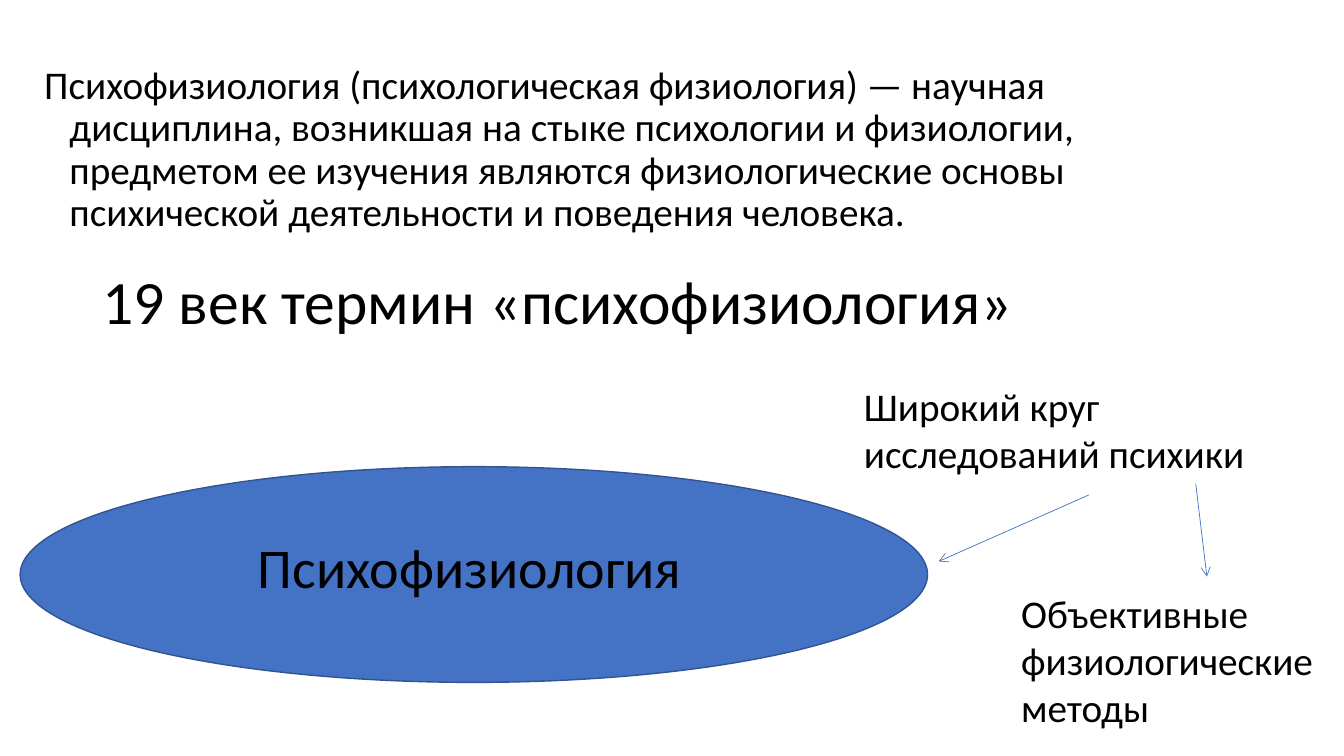
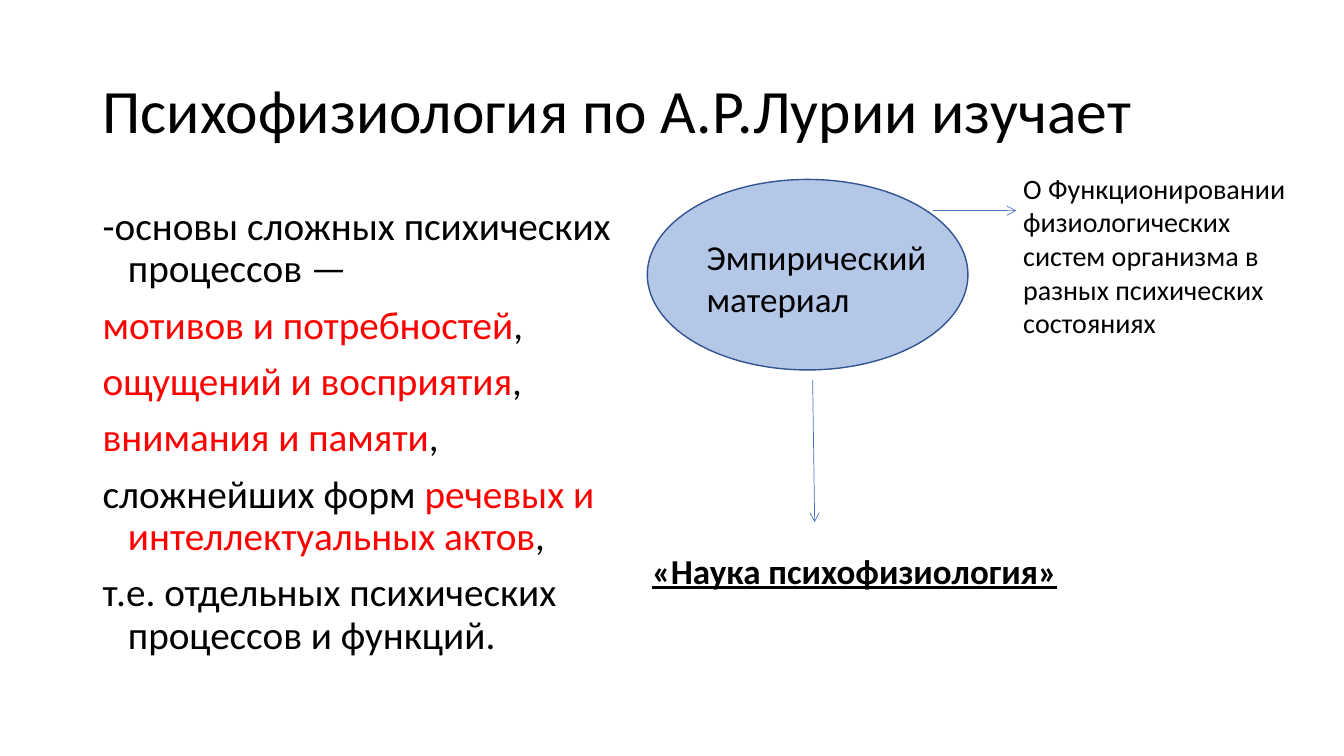
from pptx import Presentation
from pptx import util as u
from pptx.dml.color import RGBColor
from pptx.enum import shapes, text
from pptx.oxml.ns import qn
from lxml import etree

FONT = "Calibri"
HUE = {"ink": "000000", "red": "FF0000", "blue": "4472C4",
       "pale": "B4C7E7", "edge": "325491"}
TITLE = dict(size=44, mid=True, lead=0.9)
BODY = dict(size=28, lead=0.9, gap=10, hang=0.25)

deck = Presentation()
deck.slide_width, deck.slide_height = u.Inches(13.33), u.Inches(7.5)


def tint(name):
    return RGBColor.from_string(HUE[name])


def write(page, box, paras, size=28, bold=False, line=False, mid=False,
          lead=None, gap=0, hang=0):
    """Add a text box; each paragraph is a list of (words, colour) runs or a string."""
    frame = page.shapes.add_textbox(*map(u.Inches, box)).text_frame
    frame.word_wrap = True
    if mid:
        frame.vertical_anchor = text.MSO_ANCHOR.MIDDLE
    for n, runs in enumerate([paras] if isinstance(paras, str) else paras):
        para = frame.add_paragraph() if n else frame.paragraphs[0]
        if hang:
            props = para._p.get_or_add_pPr()
            props.set("marL", str(u.Inches(hang)))
            props.set("indent", str(-u.Inches(hang)))
        if lead:
            para.line_spacing = lead
        if n and gap:
            para.space_before = u.Pt(gap)
        for words, hue in [(runs, "ink")] if isinstance(runs, str) else runs:
            run = para.add_run()
            run.text = words
            font = run.font
            font.name, font.size = FONT, u.Pt(size)
            font.bold, font.underline = bold, line
            font.color.rgb = tint(hue)


# What each slide holds: ovals, arrows (from x, y to x, y) and texts
first = dict(
    ovals=[((0.2, 4.63, 9, 2.14), "blue")],
    arrows=[(10.8, 4.91, 9.31, 5.57), (11.86, 4.8, 11.97, 5.72)],
    texts=[
        ((0.92, 2.29, 10.71, 1.46), "19 век термин «психофизиология»", TITLE),
        ((0.34, 0.6, 12.08, 1.89),
         "Психофизиология (психологическая физиология) — научная дисциплина, "
         "возникшая на стыке психологии и физиологии, предметом ее изучения "
         "являются физиологические основы психической деятельности и поведения "
         "человека.", BODY),
        ((2.46, 5.23, 5.08, 0.77), "Психофизиология", dict(size=40)),
        ((8.47, 3.74, 4.67, 1.04), "Широкий круг исследований психики", {}),
        ((10.03, 5.8, 3.3, 1.51), "Объективные физиологические методы", {}),
    ])

comma = (",", "ink")
second = dict(
    ovals=[((6.42, 1.78, 3.18, 1.89), "pale")],
    arrows=[(8.06, 3.77, 8.08, 5.18), (9.25, 2.09, 10.08, 2.09)],
    texts=[
        ((0.92, 0.4, 11.5, 1.45), "Психофизиология по А.Р.Лурии изучает", TITLE),
        ((0.92, 2, 6.01, 4.76), [
            "-основы сложных психических процессов —",
            [("мотивов и потребностей", "red"), comma],
            [("ощущений и восприятия", "red"), comma],
            [("внимания и памяти", "red"), comma],
            [("сложнейших форм ", "ink"),
             ("речевых и интеллектуальных актов", "red"), comma],
            "т.е. отдельных психических процессов и функций."], BODY),
        ((6.91, 2.29, 2.48, 0.94), "Эмпирический материал", dict(size=25)),
        ((10.05, 1.65, 3.06, 1.78),
         "О Функционировании физиологических систем организма в разных "
         "психических состояниях", dict(size=20)),
        ((6.37, 5.4, 4.57, 0.52), "«Наука психофизиология»",
         dict(size=25, bold=True, line=True)),
    ])

for plan in (first, second):
    page = deck.slides.add_slide(deck.slide_layouts[6])

    # Ovals
    for box, hue in plan["ovals"]:
        oval = page.shapes.add_shape(shapes.MSO_SHAPE.OVAL, *map(u.Inches, box))
        oval.shadow.inherit = False
        oval.fill.solid()
        oval.fill.fore_color.rgb = tint(hue)
        oval.line.color.rgb = tint("edge")
        oval.line.width = u.Pt(1)

    # Arrows
    for ends in plan["arrows"]:
        arrow = page.shapes.add_connector(
            shapes.MSO_CONNECTOR.STRAIGHT, *map(u.Inches, ends))
        arrow.line.color.rgb = tint("blue")
        arrow.line.width = u.Pt(0.5)
        etree.SubElement(arrow.line._get_or_add_ln(), qn("a:tailEnd"), type="arrow")
        etree.SubElement(arrow._element.spPr, qn("a:effectLst"))

    # Texts
    for box, words, style in plan["texts"]:
        write(page, box, words, **style)

deck.save("out.pptx")
